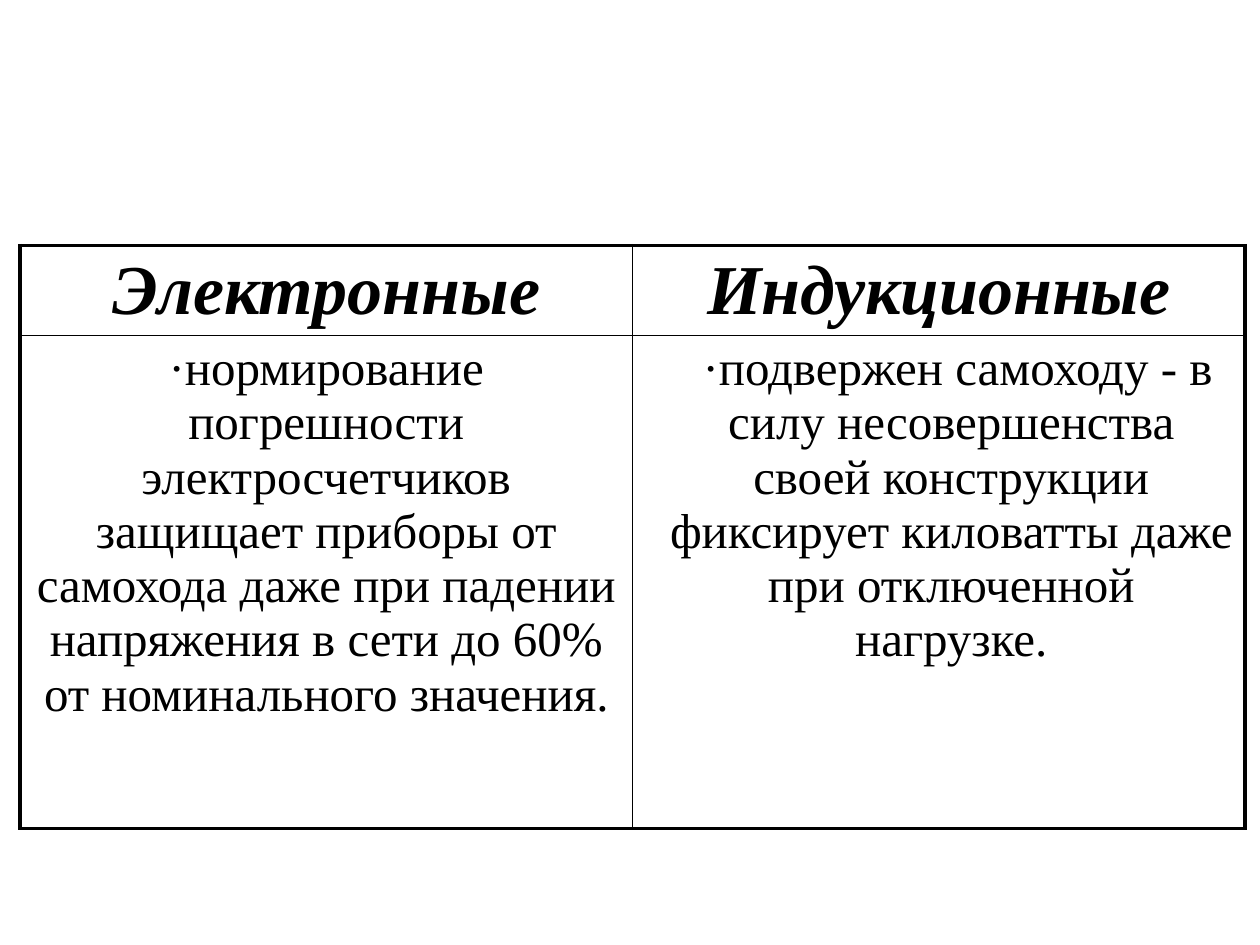
from dataclasses import dataclass

from lxml.etree import SubElement
from pptx import Presentation
from pptx.dml.color import RGBColor
from pptx.enum.text import PP_ALIGN as Align
from pptx.oxml.ns import qn
from pptx.util import Cm, Pt


@dataclass(frozen=True)
class Theme:
    ink: str = "000000"
    font: str = "Times New Roman"
    heading_size: float = 40
    body_size: float = 28
    outer_line: float = 2.25
    inner_line: float = 1


THEME = Theme()
ROW_HEIGHTS = (1.8, 9.93)
COMPARISON = (
    ("Электронные", "Индукционные"),
    (
        "·нормирование погрешности электросчетчиков защищает приборы от "
        "самохода даже при падении напряжения в сети до 60% от "
        "номинального значения.",
        "·подвержен самоходу - в силу несовершенства своей конструкции "
        "фиксирует киловатты даже при отключенной нагрузке.",
    ),
)


def set_borders(cell, outer_sides):
    """Draw all four borders, heavier on the outer sides of the table."""
    properties = cell._tc.get_or_add_tcPr()
    for position, side in enumerate("LRTB"):
        width = THEME.outer_line if side in outer_sides else THEME.inner_line
        line = properties.makeelement(qn(f"a:ln{side}"), {"w": str(Pt(width))})
        fill = SubElement(line, qn("a:solidFill"))
        SubElement(fill, qn("a:srgbClr"), val=THEME.ink)
        properties.insert(position, line)


def fill_cell(cell, text, is_heading):
    cell.fill.background()
    paragraph = cell.text_frame.paragraphs[0]
    paragraph.text = text
    paragraph.alignment = Align.CENTER
    font = paragraph.runs[0].font
    font.name = THEME.font
    font.size = Pt(THEME.heading_size if is_heading else THEME.body_size)
    font.bold = font.italic = is_heading
    font.color.rgb = RGBColor.from_string(THEME.ink)


def indent_paragraph(paragraph, margin, first_line):
    paragraph.level = 1
    properties = paragraph._p.get_or_add_pPr()
    properties.set("marL", str(margin))
    properties.set("indent", str(first_line))


def add_comparison(slide, left, top, width):
    row_count, column_count = len(COMPARISON), len(COMPARISON[0])
    table = slide.shapes.add_table(
        row_count, column_count, left, top, width, Cm(sum(ROW_HEIGHTS))
    ).table
    table.first_row = table.horz_banding = False
    for row, height in zip(table.rows, ROW_HEIGHTS):
        row.height = Cm(height)
    for row_index, texts in enumerate(COMPARISON):
        for column_index, text in enumerate(texts):
            cell = table.cell(row_index, column_index)
            fill_cell(cell, text, is_heading=row_index == 0)
            vertical = "T" if row_index == 0 else "B"
            horizontal = "L" if column_index == 0 else "R"
            set_borders(cell, vertical + horizontal)
    induction_note = table.cell(1, 1).text_frame.paragraphs[0]
    indent_paragraph(induction_note, Cm(0.5), Cm(0.25))


def main():
    presentation = Presentation()
    presentation.slide_width, presentation.slide_height = Cm(25.4), Cm(19.05)
    slide = presentation.slides.add_slide(presentation.slide_layouts[6])
    add_comparison(slide, Cm(0.4), Cm(4.95), Cm(24.7))
    presentation.save("out.pptx")


if __name__ == "__main__":
    main()
